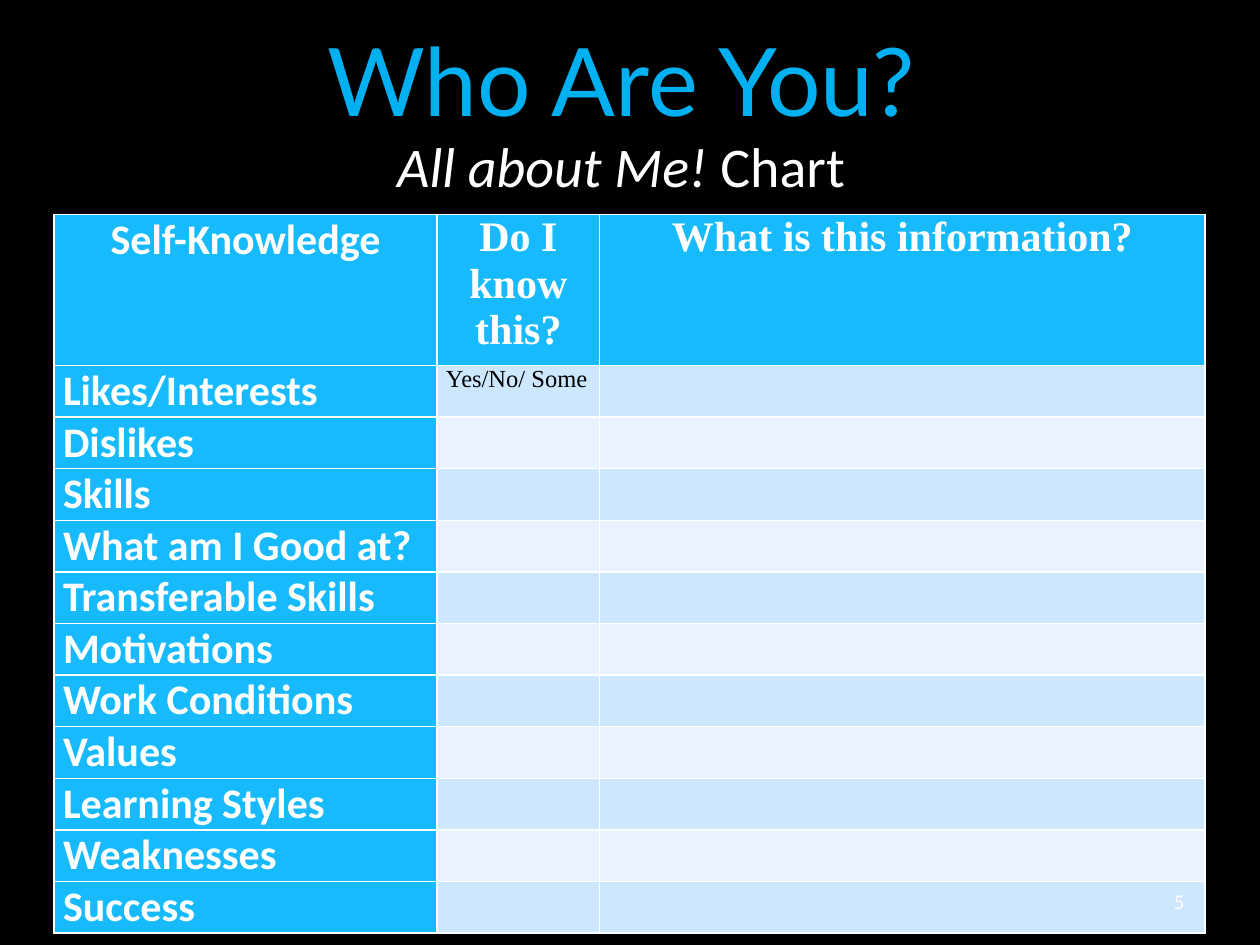
import pptx
import pptx.dml.color
import pptx.enum.text
import pptx.util

Cm, Pt = pptx.util.Cm, pptx.util.Pt
ALIGN = pptx.enum.text.PP_ALIGN
ANCHOR = pptx.enum.text.MSO_ANCHOR

# Content
TITLE = "Who Are You?"
SUBTITLE = ("All about Me! ", "Chart")
HEADINGS = ("Self-Knowledge", "Do I know this?", "What is this information?")
TOPICS = (
    "Likes/Interests", "Dislikes", "Skills", "What am I Good at?",
    "Transferable Skills", "Motivations", "Work Conditions", "Values",
    "Learning Styles", "Weaknesses", "Success",
)
ANSWER_HINT = "Yes/No/ Some"
PAGE_NUMBER = "5"

COLORS = {
    "background": "000000", "title": "00B0F0", "light": "FFFFFF", "dark": "000000",
    "heading": "17BBFD", "odd": "CCE7FE", "even": "E8F3FF",
}
COLUMN_WIDTHS = (7.72, 3.28, 12.2)
HEADING_HEIGHT, TOPIC_HEIGHT = 2.8, 1.04
LEFT, TABLE_TOP = 1.09, 4.32


def rgb(name):
    return pptx.dml.color.RGBColor.from_string(COLORS[name])


def style_run(run, font, size, color, bold=False, italic=False):
    run.font.name, run.font.size = font, Pt(size)
    run.font.bold, run.font.italic = bold, italic
    run.font.color.rgb = rgb(color)


def add_text(slide, box, runs, align, anchor):
    """Add one line of text; each run is (text, font, size, color, italic)."""
    frame = slide.shapes.add_textbox(*map(Cm, box)).text_frame
    frame.word_wrap = True
    frame.vertical_anchor = anchor
    line = frame.paragraphs[0]
    line.alignment = align
    for text, font, size, color, italic in runs:
        run = line.add_run()
        run.text = text
        style_run(run, font, size, color, italic=italic)


def fill_cell(cell, fill, text="", font="Calibri", size=24, color="light",
              bold=True, align=ALIGN.LEFT):
    cell.fill.solid()
    cell.fill.fore_color.rgb = rgb(fill)
    cell.margin_left = cell.margin_right = Cm(0.18)
    cell.margin_top = cell.margin_bottom = 0
    if text:
        line = cell.text_frame.paragraphs[0]
        line.text = text
        line.alignment = align
        style_run(line.runs[0], font, size, color, bold)


def add_chart_table(slide):
    height = HEADING_HEIGHT + TOPIC_HEIGHT * len(TOPICS)
    table = slide.shapes.add_table(
        len(TOPICS) + 1, len(HEADINGS),
        Cm(LEFT), Cm(TABLE_TOP), Cm(sum(COLUMN_WIDTHS)), Cm(height)).table
    table.first_col = True
    for column, width in zip(table.columns, COLUMN_WIDTHS):
        column.width = Cm(width)
    for index, row in enumerate(table.rows):
        row.height = Cm(TOPIC_HEIGHT if index else HEADING_HEIGHT)

    # Heading row
    for column, heading in enumerate(HEADINGS):
        fill_cell(table.cell(0, column), "heading", heading,
                  font="Times New Roman" if column else "Calibri", align=ALIGN.CENTER)

    # Topic rows with alternating answer cells
    for row, topic in enumerate(TOPICS, start=1):
        band = "odd" if row % 2 else "even"
        fill_cell(table.cell(row, 0), "heading", topic)
        fill_cell(table.cell(row, 1), band, ANSWER_HINT if row == 1 else "",
                  "Times New Roman", 14, "dark", bold=False)
        fill_cell(table.cell(row, 2), band)


def main():
    deck = pptx.Presentation()
    deck.slide_width, deck.slide_height = Cm(25.4), Cm(19.05)
    slide = deck.slides.add_slide(deck.slide_layouts[6])
    slide.background.fill.solid()
    slide.background.fill.fore_color.rgb = rgb("background")

    # Title and subtitle
    add_text(slide, (LEFT, 0, 22.86, 3.18),
             [(TITLE, "Lato", 54, "title", False)], ALIGN.CENTER, ANCHOR.MIDDLE)
    emphasis, rest = SUBTITLE
    add_text(slide, (LEFT, 2.53, 22.86, 1.88),
             [(emphasis, "Calibri", 32, "light", True),
              (rest, "Calibri", 32, "light", False)], ALIGN.CENTER, ANCHOR.TOP)

    add_chart_table(slide)

    # Page number
    add_text(slide, (18.2, 17.66, 5.93, 1.01),
             [(PAGE_NUMBER, "Calibri", 12, "light", False)], ALIGN.RIGHT, ANCHOR.MIDDLE)

    deck.save("out.pptx")


if __name__ == "__main__":
    main()
